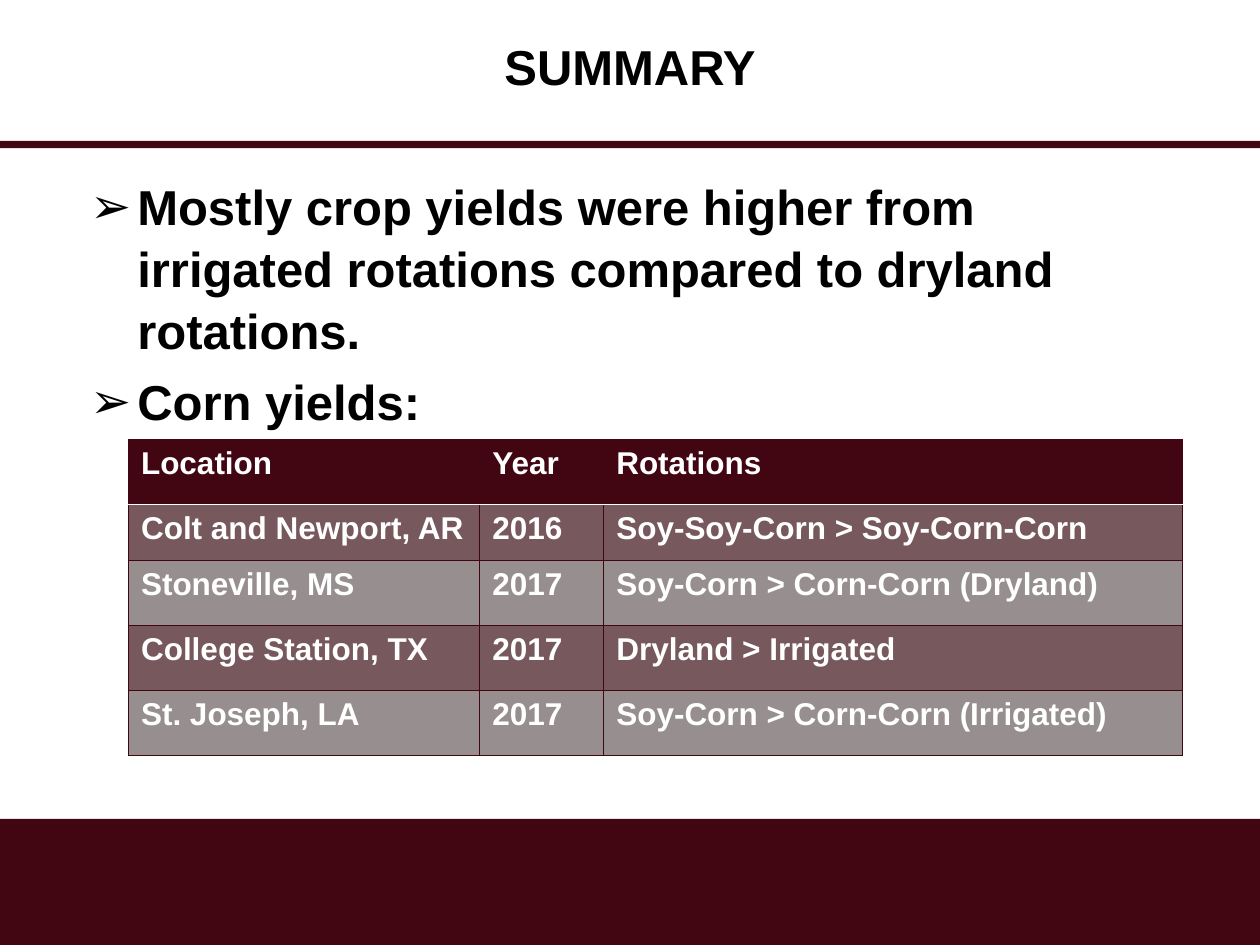
import dataclasses
import typing

import lxml.etree
import pptx
import pptx.dml.color
import pptx.enum.shapes
import pptx.enum.text
import pptx.oxml.ns
import pptx.util
from pptx.util import Cm

qn = pptx.oxml.ns.qn


@dataclasses.dataclass(frozen=True)
class Theme:
    font: str = "Arial"
    maroon: str = "410611"
    black: str = "000000"
    white: str = "FFFFFF"
    odd_row: str = "77595D"
    even_row: str = "978F8F"
    heading_size: int = 28
    table_size: int = 18


@dataclasses.dataclass(frozen=True)
class Area:
    left: float
    top: float
    width: float
    height: float

    def lengths(self) -> list:
        return [Cm(value) for value in dataclasses.astuple(self)]


class Yield(typing.NamedTuple):
    location: str
    year: str
    rotations: str


THEME = Theme()
BANDS = [Area(0, 16.51, 25.4, 2.54), Area(0, 2.84, 25.4, 0.15)]
TITLE_AREA = Area(0, 0, 25.4, 2.82)
BODY_AREA = Area(1.57, 3.38, 22.25, 13.11)
TABLE_AREA = Area(2.59, 8.86, 21.24, 6.38)
BULLET_INDENT = Cm(0.95)
COLUMN_WIDTHS = [7.08, 2.5, 11.66]
ROW_HEIGHTS = [1.31, 1.13, 1.31, 1.31, 1.31]

POINTS = [
    "Mostly crop yields were higher from irrigated rotations compared to dryland rotations.",
    "Corn yields:",
]
YIELDS = [
    Yield("Location", "Year", "Rotations"),
    Yield("Colt and Newport, AR", "2016", "Soy-Soy-Corn > Soy-Corn-Corn"),
    Yield("Stoneville, MS", "2017", "Soy-Corn > Corn-Corn (Dryland)"),
    Yield("College Station, TX", "2017", "Dryland > Irrigated"),
    Yield("St. Joseph, LA", "2017", "Soy-Corn > Corn-Corn (Irrigated)"),
]


def rgb(colour: str) -> pptx.dml.color.RGBColor:
    return pptx.dml.color.RGBColor.from_string(colour)


def apply(target, formats: dict) -> None:
    for name, value in formats.items():
        setattr(target, name, value)


def write(para, text: str, size: int, colour: str) -> None:
    span = para.add_run()
    span.text = text
    apply(span.font, {"name": THEME.font, "size": pptx.util.Pt(size), "bold": True})
    span.font.color.rgb = rgb(colour)


def add_band(page, area: Area) -> None:
    band = page.shapes.add_shape(pptx.enum.shapes.MSO_SHAPE.RECTANGLE, *area.lengths())
    band.shadow.inherit = False
    band.fill.solid()
    band.fill.fore_color.rgb = rgb(THEME.maroon)
    band.line.fill.background()


def add_title(page, text: str) -> None:
    frame = page.shapes.add_textbox(*TITLE_AREA.lengths()).text_frame
    apply(frame, {"word_wrap": True, "vertical_anchor": pptx.enum.text.MSO_ANCHOR.MIDDLE})
    para = frame.paragraphs[0]
    apply(para, {"alignment": pptx.enum.text.PP_ALIGN.CENTER, "line_spacing": 0.9})
    write(para, text, THEME.heading_size, THEME.black)


def add_bullets(page, points: list[str]) -> None:
    frame = page.shapes.add_textbox(*BODY_AREA.lengths()).text_frame
    frame.word_wrap = True
    for index, point in enumerate(points):
        para = frame.add_paragraph() if index else frame.paragraphs[0]
        apply(para, {"line_spacing": 1.05})
        if index:
            para.space_before = pptx.util.Pt(5.6)
        properties = para._p.get_or_add_pPr()
        properties.set("marL", str(BULLET_INDENT))
        properties.set("indent", str(-BULLET_INDENT))
        lxml.etree.SubElement(properties, qn("a:buFont")).set("typeface", THEME.font)
        lxml.etree.SubElement(properties, qn("a:buChar")).set("char", "➢")
        write(para, point, THEME.heading_size, THEME.black)


def set_border(cell, side: str, colour: str, points: float) -> None:
    line = lxml.etree.Element(qn(f"a:{side}"), w=str(pptx.util.Pt(points)))
    fill = lxml.etree.SubElement(line, qn("a:solidFill"))
    lxml.etree.SubElement(fill, qn("a:srgbClr")).set("val", colour)
    # Borders come before the fill in the cell properties
    properties = cell._tc.get_or_add_tcPr()
    properties.insert(len(properties) - 1, line)


def add_yield_table(page, rows: list[Yield]) -> None:
    table = page.shapes.add_table(
        len(rows), len(COLUMN_WIDTHS), *TABLE_AREA.lengths()
    ).table
    for column, width in zip(table.columns, COLUMN_WIDTHS):
        column.width = Cm(width)
    for row_index, (row, height) in enumerate(zip(rows, ROW_HEIGHTS)):
        table.rows[row_index].height = Cm(height)
        band = THEME.odd_row if row_index % 2 else THEME.even_row
        for column_index, text in enumerate(row):
            cell = table.cell(row_index, column_index)
            cell.fill.solid()
            cell.fill.fore_color.rgb = rgb(band if row_index else THEME.maroon)
            for side in ("lnL", "lnR", "lnT", "lnB"):
                under_header = (row_index, side) in ((0, "lnB"), (1, "lnT"))
                colour, points = (THEME.white, 1) if under_header else (THEME.maroon, 0.5)
                set_border(cell, side, colour, points)
            write(cell.text_frame.paragraphs[0], text, THEME.table_size, THEME.white)


def main() -> None:
    deck = pptx.Presentation()
    apply(deck, {"slide_width": Cm(25.4), "slide_height": Cm(19.05)})
    page = deck.slides.add_slide(deck.slide_layouts[6])

    # Footer band and rule under the title
    for area in BANDS:
        add_band(page, area)

    # Title and main points
    add_title(page, "SUMMARY")
    add_bullets(page, POINTS)

    # Corn yields by location
    add_yield_table(page, YIELDS)

    deck.save("out.pptx")


if __name__ == "__main__":
    main()
